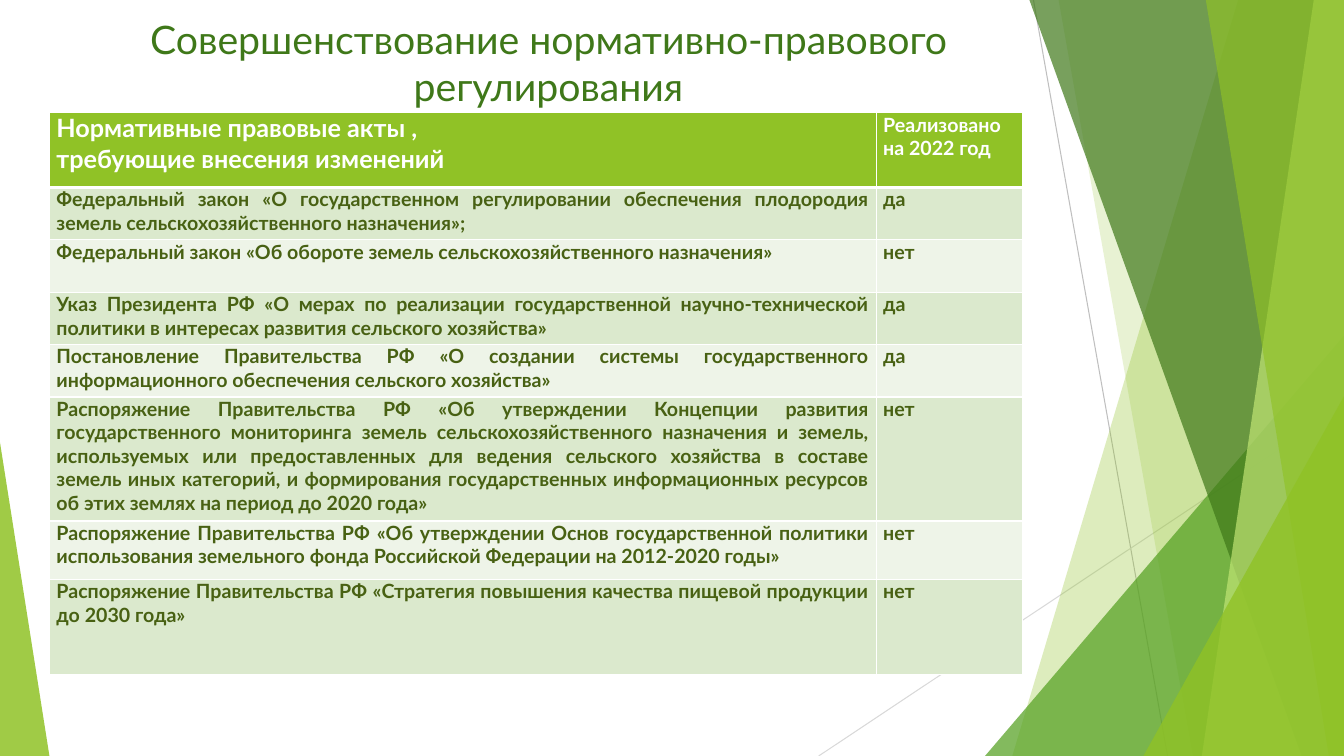
from pptx import Presentation
from pptx.dml.color import RGBColor
from pptx.enum.shapes import MSO_CONNECTOR, MSO_SHAPE
from pptx.enum.text import MSO_ANCHOR, PP_ALIGN
from pptx.oxml import parse_xml
from pptx.oxml.ns import nsdecls
from pptx.oxml.xmlchemy import OxmlElement
from pptx.util import Inches, Pt

LINE = MSO_CONNECTOR.STRAIGHT
TRI = MSO_SHAPE.ISOSCELES_TRIANGLE
TOP, BOTTOM = MSO_ANCHOR.TOP, MSO_ANCHOR.BOTTOM
CENTER, JUSTIFY = PP_ALIGN.CENTER, PP_ALIGN.JUSTIFY

WIDE, HIGH = 13.33, 7.5
THEME = {
    "font": "Lato", "title": 28, "head": 18, "body": 14,
    "lime": "90C226", "leaf": "54A021", "dark": "3F7819", "pale": "C0E474",
    "ink": "486113", "white": "FFFFFF", "bands": ("DBE9CD", "EEF4E8"),
}


def write(frame, text, size, color, align):
    """Put text in a frame, one paragraph per line."""
    frame.text = text
    form = {"name": THEME["font"], "size": Pt(size), "bold": align == JUSTIFY}
    for para in frame.paragraphs:
        para.alignment = align
        font = para.runs[0].font
        for key, val in form.items():
            setattr(font, key, val)
        font.color.rgb = RGBColor.from_string(color)


def paint(shape, color, alpha):
    """Give a shape a see-through fill, no line and no shadow."""
    shape.shadow.inherit = False
    shape.line.fill.background()
    shape.fill.solid()
    shape.fill.fore_color.rgb = RGBColor.from_string(color)
    tint = OxmlElement("a:alpha")
    tint.set("val", str(alpha * 1000))
    shape.fill._xPr.find(".//{*}srgbClr").append(tint)


deck = Presentation()
deck.slide_width, deck.slide_height = Inches(WIDE), Inches(HIGH)
slide = deck.slides.add_slide(deck.slide_layouts[5])
shapes = slide.shapes

# Thin lines behind the facets
for x1, y1, x2, y2, color in (
    (10.25, 0, 11.58, HIGH, "BFBFBF"),
    (WIDE, 4.03, 8.12, HIGH, "D9D9D9"),
):
    line = shapes.add_connector(LINE, *map(Inches, (x1, y1, x2, y2)))
    line.line.color.rgb = RGBColor.from_string(color)
    line.line.width = Pt(0.75)
    line._element.spPr.append(OxmlElement("a:effectLst"))

# Facets: a slab has a slanted left edge (top x, bottom x) and ends at the
# right side; a triangle stands on the bottom (left, width, height, peak)
for place, color, alpha in (
    ((12.28, 10.04), "lime", 30),
    ((10.5, 11.83), "lime", 20),
    ((9.77, 3.56, 4.17, 1), "leaf", 72),
    ((10.21, 12.91), "dark", 70),
    ((13.03, 11.92), "pale", 70),
    ((11.96, 13.18), "lime", 65),
    ((11.34, 1.99, 3.57, 1), "lime", 80),
    ((0, 0.49, 3.11, 0), "lime", 85),
):
    if len(place) == 2:
        top, low = place
        pen = shapes.build_freeform(Inches(top), 0)
        edge = ((WIDE, 0), (WIDE, HIGH), (low, HIGH))
        pen.add_line_segments([(Inches(x), Inches(y)) for x, y in edge])
        facet = pen.convert_to_shape()
    else:
        left, wide, high, peak = place
        box = map(Inches, (left, HIGH - high, wide, high))
        facet = shapes.add_shape(TRI, *box)
        facet.adjustments[0] = peak
    paint(facet, THEME[color], alpha)

# Title
title = shapes.title
spot = {"left": 0.74, "top": 0.1, "width": 9.4, "height": 1.04}
for key, val in spot.items():
    setattr(title, key, Inches(val))
write(title.text_frame, "Совершенствование нормативно-правового регулирования",
      THEME["title"], THEME["dark"], CENTER)
title.text_frame.vertical_anchor = BOTTOM
title.text_frame.word_wrap = True

# Table of legal acts
rows = (
    (0.74, "Нормативные правовые акты ,\nтребующие внесения изменений",
     "Реализовано\nна 2022 год"),
    (0.52, "Федеральный закон «О государственном регулировании обеспечения "
     "плодородия земель сельскохозяйственного назначения»;", "да"),
    (0.52, "Федеральный закон «Об обороте земель сельскохозяйственного "
     "назначения»", "нет"),
    (0.52, "Указ Президента РФ «О мерах по реализации государственной "
     "научно-технической политики в интересах развития сельского хозяйства»",
     "да"),
    (0.52, "Постановление Правительства РФ «О создании системы "
     "государственного информационного обеспечения сельского хозяйства»",
     "да"),
    (1.23, "Распоряжение Правительства РФ «Об утверждении Концепции развития "
     "государственного мониторинга земель сельскохозяйственного назначения и "
     "земель, используемых или предоставленных для ведения сельского "
     "хозяйства в составе земель иных категорий, и формирования "
     "государственных информационных ресурсов об этих землях на период до "
     "2020 года»", "нет"),
    (0.58, "Распоряжение Правительства РФ «Об утверждении Основ "
     "государственной политики использования земельного фонда Российской "
     "Федерации на 2012-2020 годы»", "нет"),
    (0.94, "Распоряжение Правительства РФ «Стратегия повышения качества "
     "пищевой продукции до 2030 года»", "нет"),
)
cols = (8.2, 1.45)
size = (0.49, 1.12, sum(cols), sum(row[0] for row in rows))
table = shapes.add_table(len(rows), len(cols), *map(Inches, size)).table
for col, wide in zip(table.columns, cols):
    col.width = Inches(wide)

pad = {"margin_left": Inches(0.07), "margin_right": Inches(0.07),
       "margin_top": 0, "margin_bottom": 0, "vertical_anchor": TOP}
for r, (high, *texts) in enumerate(rows):
    table.rows[r].height = Inches(high)
    for c, text in enumerate(texts):
        cell = table.cell(r, c)
        for key, val in pad.items():
            setattr(cell, key, val)
        pts = THEME["head"] if r == c == 0 else THEME["body"]
        ink = THEME["ink"] if r else THEME["white"]
        write(cell.text_frame, text, pts, ink, JUSTIFY)
        back = THEME["bands"][(r - 1) % 2] if r else THEME["lime"]
        cell.fill.solid()
        cell.fill.fore_color.rgb = RGBColor.from_string(back)
        # White borders, thicker between the head and the body
        for i, side in enumerate("LRTB"):
            thick = (r, side) in ((0, "B"), (1, "T"))
            border = parse_xml(
                f'<a:ln{side} {nsdecls("a")} w="{Pt(3 if thick else 1)}">'
                f'<a:solidFill><a:srgbClr val="{THEME["white"]}"/>'
                f'</a:solidFill></a:ln{side}>')
            cell._tc.tcPr.insert(i, border)

deck.save("out.pptx")
